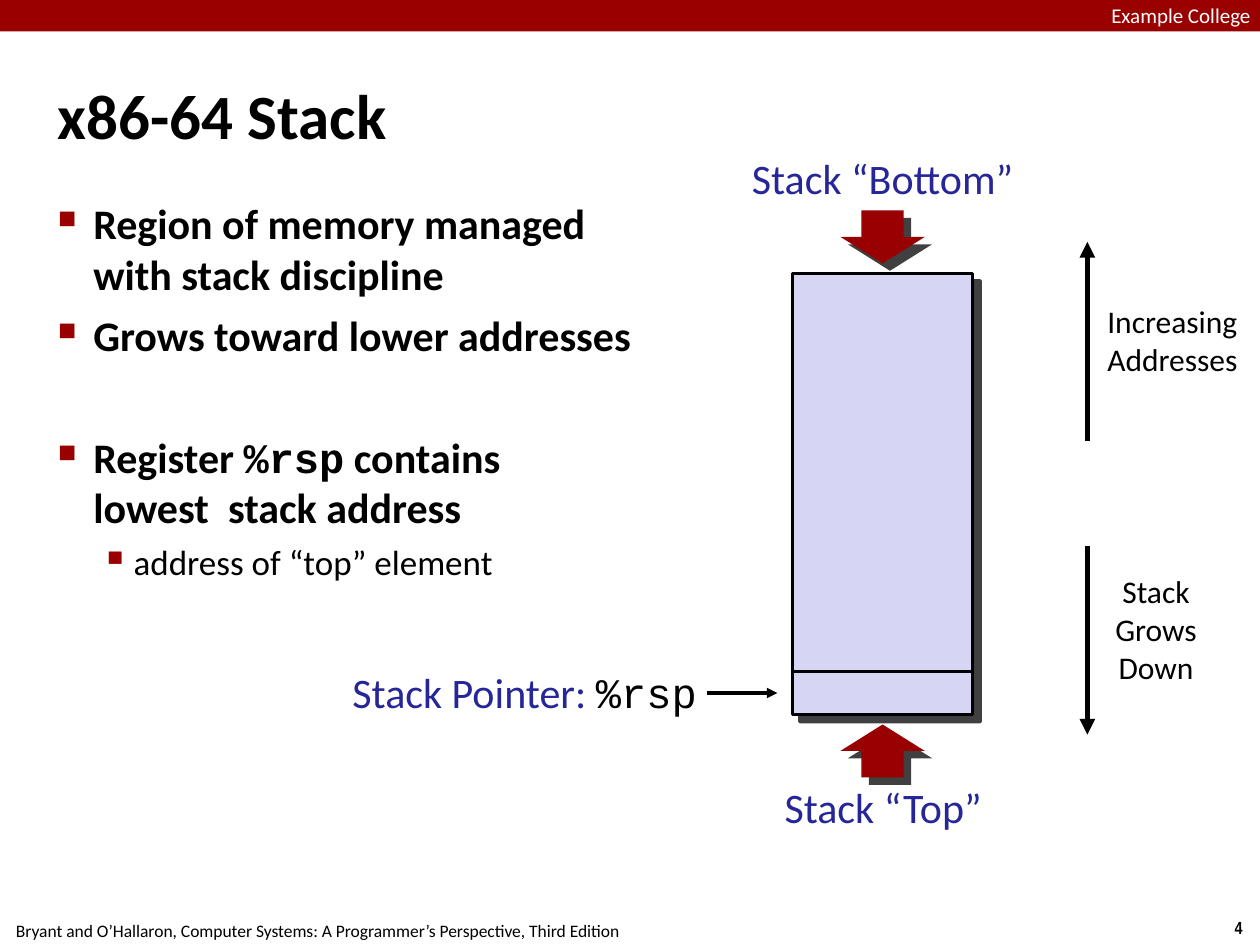
from lxml import etree
from pptx import Presentation
from pptx.dml.color import RGBColor
from pptx.enum.shapes import MSO_CONNECTOR, MSO_SHAPE
from pptx.enum.text import MSO_ANCHOR, PP_ALIGN
from pptx.oxml import parse_xml
from pptx.oxml.ns import qn
from pptx.util import Inches, Pt

RECT, DOWN, UP = MSO_SHAPE.RECTANGLE, MSO_SHAPE.DOWN_ARROW, MSO_SHAPE.UP_ARROW
LEFT, MID, RIGHT = PP_ALIGN.LEFT, PP_ALIGN.CENTER, PP_ALIGN.RIGHT
BLACK = RGBColor(0, 0, 0)
WHITE = RGBColor(255, 255, 255)
RED = RGBColor(0x99, 0, 0)
ARROW = RGBColor(0x98, 0, 2)
BLUE = RGBColor(0x26, 0x26, 0x99)
LILAC = RGBColor(0xD6, 0xD6, 0xF4)
SANS, MONO, NARROW = "Calibri", "Courier New", "Arial Narrow"
NS = "http://schemas.openxmlformats.org/drawingml/2006/main"

# level, space before in points, runs of (text, font)
POINTS = [
    (0, 6, [("Region of memory managed with stack discipline", SANS)]),
    (0, 6, [("Grows toward lower addresses", SANS)]),
    (0, 41, [("Register ", SANS), ("%rsp", MONO),
             (" contains \vlowest  stack address", SANS)]),
    (1, 5, [("address of “top” element", SANS)]),
]
# size, bold, margin, hanging indent, bullet, bullet percent
LEVELS = [
    (24, True, 0.28, 0.28, "■", 60),
    (20, False, 0.6, 0.26, "▪", 110),
]
# text, box, size, colour, alignment, fill
LABELS = [
    ("Stack “Bottom”", (5.89, 1.17, 2.23, 0.49), 24, BLUE, MID, None),
    ("Stack “Top”", (6.16, 6.16, 1.7, 0.49), 24, BLUE, MID, None),
    ("Increasing\nAddresses", (8.74, 2.36, 1.13, 0.69), 18, BLACK, MID, WHITE),
    ("Stack Grows\nDown", (8.73, 4.5, 0.89, 1), 18, BLACK, MID, WHITE),
]
# start, end, width, arrowhead
LINES = [
    ((5.61, 5.5), (6.17, 5.5), 2, True),
    ((6.29, 5.33), (7.71, 5.33), 2, False),
    ((8.63, 3.5), (8.63, 1.92), 3, True),
    ((8.63, 4.33), (8.63, 5.83), 3, True),
]
# shape, box, fill, outlined
BLOCKS = [
    (RECT, (6.29, 2.17, 1.43, 3.5), LILAC, True),
    (DOWN, (6.67, 1.67, 0.67, 0.42), ARROW, False),
    (UP, (6.67, 5.75, 0.67, 0.42), ARROW, False),
]


def style(run, size, color, font=SANS, bold=False):
    run.font.size, run.font.name, run.font.bold = Pt(size), font, bold
    run.font.color.rgb = color


def add_text(slide, text, box, size, color, align=LEFT, fill=None, font=SANS,
             bold=False, pad=0.04, wrap=False):
    shape = slide.shapes.add_textbox(*map(Inches, box))
    if fill is not None:
        shape.fill.solid()
        shape.fill.fore_color.rgb = fill
    frame = shape.text_frame
    frame.word_wrap = wrap
    frame.margin_left = frame.margin_right = Inches(pad)
    frame.margin_top = frame.margin_bottom = Inches(pad)
    frame.text = text
    for para in frame.paragraphs:
        para.alignment = align
        for run in para.runs:
            style(run, size, color, font, bold)
    return frame


def add_block(slide, kind, box, fill, edge=False):
    shape = slide.shapes.add_shape(kind, *map(Inches, box))
    shape.shadow.inherit = False
    shape.fill.solid()
    shape.fill.fore_color.rgb = fill
    if edge:
        shape.line.color.rgb = BLACK
        shape.line.width = Pt(2)
    else:
        shape.line.fill.background()
    return shape


def cast_shadow(shape):
    """Give a hard, dark shadow to the lower right."""
    effects = shape._element.spPr.find(qn("a:effectLst"))
    effects.append(parse_xml(
        f'<a:outerShdw xmlns:a="{NS}" blurRad="0" dist="{Pt(6)}" dir="2700000"'
        ' algn="ctr" rotWithShape="0"><a:srgbClr val="000000">'
        '<a:alpha val="75000"/></a:srgbClr></a:outerShdw>'))


def add_line(slide, start, end, width, head):
    line = slide.shapes.add_connector(
        MSO_CONNECTOR.STRAIGHT, *map(Inches, start + end))
    line.line.color.rgb = BLACK
    line.line.width = Pt(width)
    if head:
        etree.SubElement(line.line._get_or_add_ln(), qn("a:tailEnd"),
                         type="triangle")
    etree.SubElement(line._element.spPr, qn("a:effectLst"))


def set_bullet(para, margin, hang, mark, percent):
    props = para._p.get_or_add_pPr()
    props.set("marL", str(Inches(margin)))
    props.set("indent", str(-Inches(hang)))
    color = etree.SubElement(props, qn("a:buClr"))
    etree.SubElement(color, qn("a:srgbClr"), val=str(RED))
    etree.SubElement(props, qn("a:buSzPct"), val=str(percent * 1000))
    etree.SubElement(props, qn("a:buChar"), char=mark)


def add_points(slide):
    frame = add_text(slide, "", (0.42, 1.53, 4.88, 5.94), 24, BLACK, wrap=True)
    for i, (level, gap, parts) in enumerate(POINTS):
        para = frame.add_paragraph() if i else frame.paragraphs[0]
        size, bold, *bullet = LEVELS[level]
        para.level = level
        para.space_before = Pt(gap)
        set_bullet(para, *bullet)
        para.text = "".join(text for text, _ in parts) if len(parts) == 1 else ""
        if len(parts) > 1:
            for text, font in parts:
                first, *rest = text.split("\v")
                add_run(para, first, size, BLACK, font, bold)
                for piece in rest:
                    para.add_line_break()
                    add_run(para, piece, size, BLACK, font, bold)
        for run in para.runs:
            style(run, size, BLACK, run.font.name or SANS, bold)


def add_run(para, text, *look):
    run = para.add_run()
    run.text = text
    style(run, *look)


def main():
    deck = Presentation()
    deck.slide_width, deck.slide_height = Inches(10), Inches(7.5)
    slide = deck.slides.add_slide(deck.slide_layouts[6])

    add_text(slide, "4", (9.66, 7.23, 0.34, 0.27), 10, BLACK, MID,
             font=NARROW, bold=True, pad=0.05)
    add_text(slide, "Bryant and O’Hallaron, Computer Systems: "
             "A Programmer’s Perspective, Third Edition",
             (-0.02, 7.25, 5.08, 0.27), 10, BLACK, MID, pad=0.05)
    add_block(slide, RECT, (0, 0, 10, 0.25), RED)
    add_text(slide, "Example College", (8.82, 0.02, 1.44, 0.19), 12, WHITE,
             pad=0, wrap=True)
    title = add_text(slide, "x86-64 Stack", (0.42, 0.28, 9.17, 1.25), 36,
                     BLACK, bold=True, wrap=True)
    title.vertical_anchor = MSO_ANCHOR.MIDDLE
    add_points(slide)

    for block in BLOCKS:
        cast_shadow(add_block(slide, *block))
    for label in LABELS:
        add_text(slide, *label, wrap=label[0].startswith("Stack Grows"))
    pointer = add_text(slide, "Stack Pointer: ", (2.69, 5.25, 2.88, 0.5), 24,
                       BLUE, RIGHT)
    add_run(pointer.paragraphs[0], "%rsp", 24, BLACK, MONO)
    for line in LINES:
        add_line(slide, *line)
    deck.save("out.pptx")


if __name__ == "__main__":
    main()
